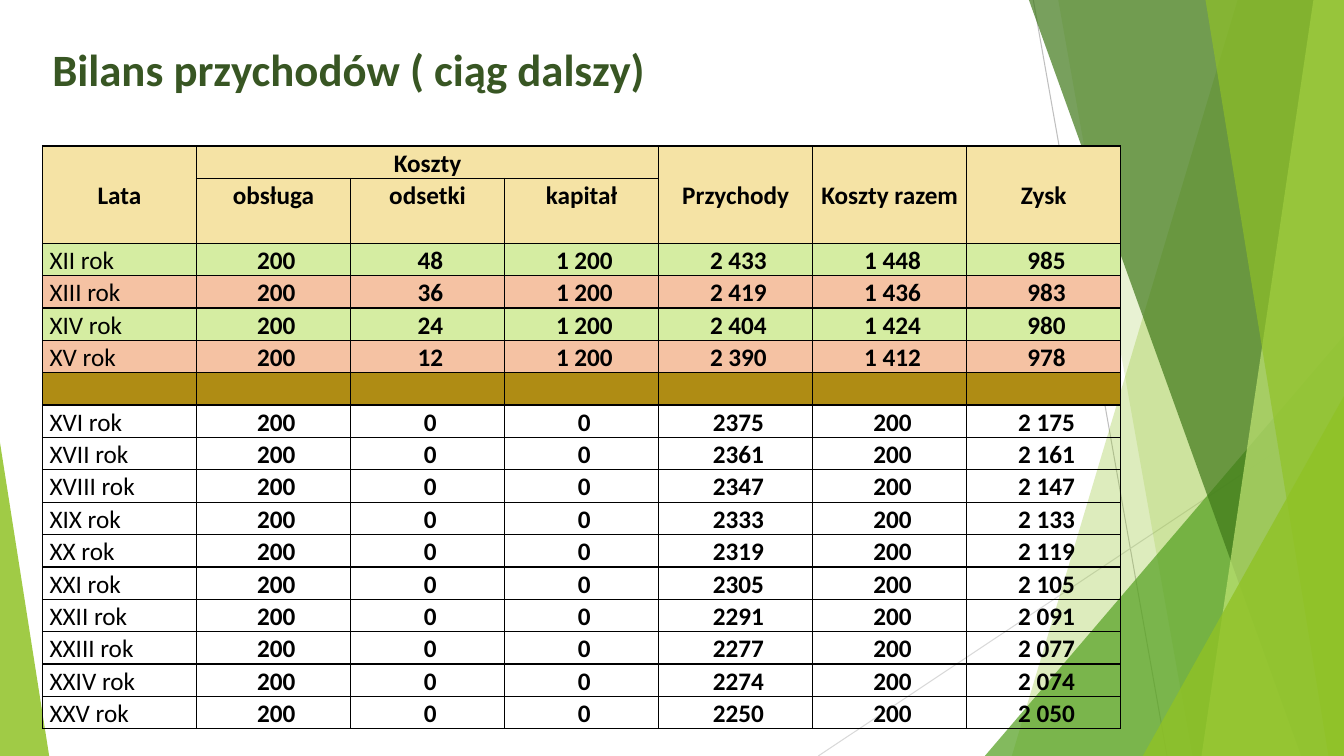
from dataclasses import dataclass

from lxml import etree
from pptx import Presentation, util as u
from pptx.dml import color as dml
from pptx.enum import shapes, text
from pptx.oxml import ns

WIDTH, HEIGHT = 33.87, 19.05
FONT = "Calibri"
COLORS = {
    "lime": "90C226",
    "pale lime": "C0E474",
    "green": "54A021",
    "dark green": "3F7819",
    "title": "385623",
    "grey": "BFBFBF",
    "light grey": "D9D9D9",
    "black": "000000",
    "header": "F5E3A5",
    "even": "D5EDA2",
    "odd": "F5C2A3",
    "divider": "AF8C14",
}


@dataclass
class Ray:
    start: tuple[float, float]
    end: tuple[float, float]
    color: str


@dataclass
class Band:
    """A panel from a slanted left edge to the right side of the slide."""
    top_x: float
    bottom_x: float
    color: str
    opacity: int


@dataclass
class Triangle:
    left: float
    top: float
    width: float
    apex: float
    color: str
    opacity: int


@dataclass
class Year:
    name: str
    interest: int
    capital: int
    revenue: str
    fill: str | None = None

    def texts(self) -> list[str]:
        service = 200
        costs = service + self.interest + self.capital
        profit = int(self.revenue.replace(" ", "")) - costs
        numbers = [grouped(n) for n in (service, self.interest, self.capital)]
        return [self.name, *numbers, self.revenue, grouped(costs), grouped(profit)]


RAYS = [
    Ray((26.04, 0), (29.41, HEIGHT), "grey"),
    Ray((WIDTH, 10.24), (20.62, HEIGHT), "light grey"),
]
DECOR = [
    Band(31.19, 25.5, "lime", 30),
    Band(26.67, 30.05, "lime", 20),
    Triangle(24.82, 8.46, 9.05, 1, "green", 72),
    Band(25.93, 32.79, "dark green", 70),
    Band(33.1, 30.28, "pale lime", 70),
    Band(30.38, 33.48, "lime", 65),
    Triangle(28.8, 9.98, 5.07, 1, "lime", 80),
    Triangle(0, 11.15, 1.24, 0, "lime", 85),
]
LOAN_YEARS = [
    Year("XII rok", 48, 1200, "2 433", "even"),
    Year("XIII rok", 36, 1200, "2 419", "odd"),
    Year("XIV rok", 24, 1200, "2 404", "even"),
    Year("XV rok", 12, 1200, "2 390", "odd"),
]
FREE_REVENUES = {
    "XVI": 2375, "XVII": 2361, "XVIII": 2347, "XIX": 2333, "XX": 2319,
    "XXI": 2305, "XXII": 2291, "XXIII": 2277, "XXIV": 2274, "XXV": 2250,
}
FREE_YEARS = [Year(f"{n} rok", 0, 0, str(r)) for n, r in FREE_REVENUES.items()]
TOP_HEADS = {0: "Lata", 1: "Koszty", 4: "Przychody", 5: "Koszty razem", 6: "Zysk"}
COST_HEADS = {1: "obsługa", 2: "odsetki", 3: "kapitał"}


def grouped(number: int) -> str:
    return f"{number:,}".replace(",", " ")


def rgb(name: str) -> dml.RGBColor:
    return dml.RGBColor.from_string(COLORS[name])


def paint(shape, color: str, opacity: int) -> None:
    shape.shadow.inherit = False
    shape.line.fill.background()
    shape.fill.solid()
    shape.fill.fore_color.rgb = rgb(color)
    tint = shape._element.spPr.find(".//" + ns.qn("a:srgbClr"))
    etree.SubElement(tint, ns.qn("a:alpha"), val=str(opacity * 1000))


def draw_ray(page, ray: Ray) -> None:
    points = [u.Cm(value) for value in (*ray.start, *ray.end)]
    line = page.shapes.add_connector(shapes.MSO_CONNECTOR.STRAIGHT, *points)
    line.line.color.rgb = rgb(ray.color)
    line.line.width = u.Pt(0.75)
    etree.SubElement(line._element.spPr, ns.qn("a:effectLst"))


def draw_decor(page, item: Band | Triangle) -> None:
    if isinstance(item, Band):
        corners = [(WIDTH, 0), (WIDTH, HEIGHT), (item.bottom_x, HEIGHT)]
        builder = page.shapes.build_freeform(u.Cm(item.top_x), 0)
        builder.add_line_segments([(u.Cm(x), u.Cm(y)) for x, y in corners])
        shape = builder.convert_to_shape()
    else:
        shape = page.shapes.add_shape(
            shapes.MSO_SHAPE.ISOSCELES_TRIANGLE, u.Cm(item.left), u.Cm(item.top),
            u.Cm(item.width), u.Cm(HEIGHT - item.top))
        shape.adjustments[0] = item.apex
    paint(shape, item.color, item.opacity)


def style_text(para, size: int, color: str, bold: bool) -> None:
    para.line_spacing = 1.07
    para.font.name = FONT
    para.font.size = u.Pt(size)
    para.font.bold = bold
    para.font.color.rgb = rgb(color)


def draw_title(page) -> None:
    box = page.shapes.add_textbox(u.Cm(1.07), u.Cm(0.84), u.Cm(20.62), u.Cm(1.73))
    box.text_frame.word_wrap = True
    para = box.text_frame.paragraphs[0]
    para.text = "Bilans przychodów ( ciąg dalszy)"
    style_text(para, 32, "title", True)


def style_cell(cell, fill: str | None) -> None:
    """Set fill, margins and a thin black border on every side."""
    cell.margin_left = cell.margin_right = u.Cm(0.18)
    cell.margin_top = cell.margin_bottom = 0
    if fill:
        cell.fill.solid()
        cell.fill.fore_color.rgb = rgb(fill)
    else:
        cell.fill.background()
    properties = cell._tc.get_or_add_tcPr()
    for index, side in enumerate(("lnL", "lnR", "lnT", "lnB")):
        border = etree.Element(ns.qn(f"a:{side}"), w=str(u.Pt(1)))
        solid = etree.SubElement(border, ns.qn("a:solidFill"))
        etree.SubElement(solid, ns.qn("a:srgbClr"), val=COLORS["black"])
        properties.insert(index, border)


def write_cell(cell, words: str, bold: bool = True) -> None:
    para = cell.text_frame.paragraphs[0]
    para.text = words
    style_text(para, 18, "black", bold)
    para.alignment = text.PP_ALIGN.CENTER if bold else text.PP_ALIGN.LEFT


def draw_balance(page) -> None:
    body = [*LOAN_YEARS, None, *FREE_YEARS]
    row_count, column_count = len(body) + 2, 7
    width, height = u.Cm(27.18), u.Cm(14.68)
    table = page.shapes.add_table(
        row_count, column_count, u.Cm(1.07), u.Cm(3.68), width, height).table
    table.first_row = table.horz_banding = False
    for row in table.rows:
        row.height = height // (row_count + 1)
    table.rows[1].height *= 2

    fills = ["header"] * 2 + [year.fill if year else "divider" for year in body]
    for row, fill in zip(table.rows, fills):
        for cell in row.cells:
            style_cell(cell, fill)
            cell.text_frame.paragraphs[0].font.size = u.Pt(18)

    table.cell(0, 1).merge(table.cell(0, 3))
    for row, heads in enumerate((TOP_HEADS, COST_HEADS)):
        for column, head in heads.items():
            cell = table.cell(row, column)
            write_cell(cell, head)
            if row == 0 and column != 1:
                cell.merge(table.cell(1, column))
                cell.vertical_anchor = text.MSO_ANCHOR.MIDDLE

    for row, year in enumerate(body, start=2):
        for column, words in enumerate(year.texts() if year else []):
            cell = table.cell(row, column)
            write_cell(cell, words, bold=column > 0)
            if column:
                cell.margin_left = u.Cm(0.32)


def main() -> None:
    deck = Presentation()
    deck.slide_width, deck.slide_height = u.Cm(WIDTH), u.Cm(HEIGHT)
    page = deck.slides.add_slide(deck.slide_layouts[6])
    for ray in RAYS:
        draw_ray(page, ray)
    for item in DECOR:
        draw_decor(page, item)
    draw_title(page)
    draw_balance(page)
    deck.save("out.pptx")


if __name__ == "__main__":
    main()
